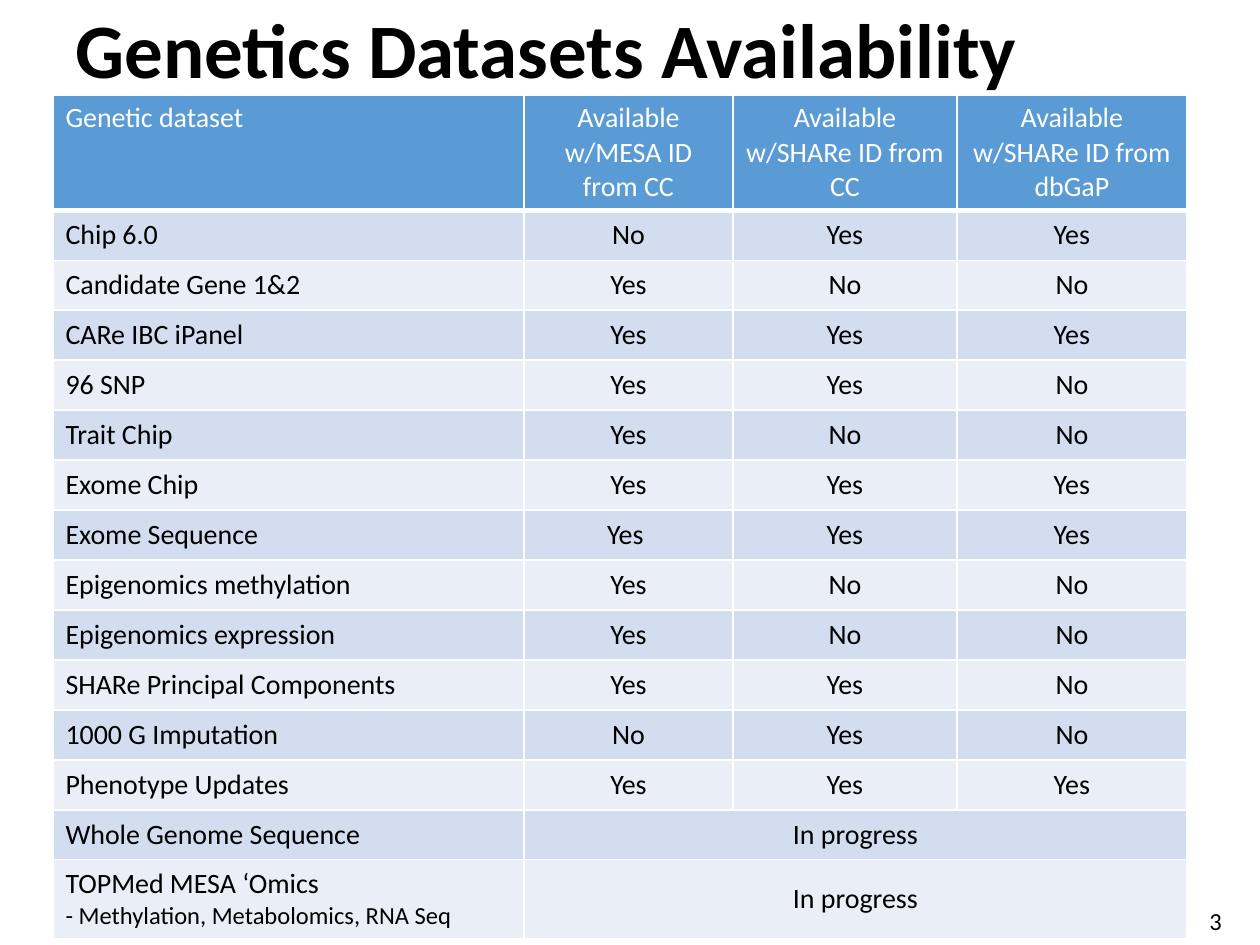
"""Build the genetics dataset availability slide."""
import dataclasses
import typing

import pptx
import pptx.dml.color
import pptx.enum.text
import pptx.oxml
import pptx.oxml.ns
import pptx.util

ALIGN = pptx.enum.text.PP_ALIGN
ANCHOR = pptx.enum.text.MSO_ANCHOR


@dataclasses.dataclass(frozen=True)
class Theme:
    face: str = "Calibri"
    ink: str = "000000"
    paper: str = "FFFFFF"
    header: str = "5B9BD5"
    bands: tuple[str, str] = ("D2DEEF", "EAEFF7")
    title_size: int = 44
    cell_size: int = 16
    small_size: int = 14
    rule: int = 1
    header_rule: int = 3


@dataclasses.dataclass(frozen=True)
class Dataset:
    name: str
    status: tuple[str, ...]
    detail: str = ""


THEME = Theme()
COLUMNS = (471, 209, 224, 230)
HEADER_HEIGHT, ROW_HEIGHT, DETAIL_HEIGHT = 115, 50, 79
HEADINGS = Dataset("Genetic dataset", (
    "Available w/MESA ID from CC",
    "Available w/SHARe ID from CC",
    "Available w/SHARe ID from dbGaP",
))
DATASETS = (
    Dataset("Chip 6.0", ("No", "Yes", "Yes")),
    Dataset("Candidate Gene 1&2", ("Yes", "No", "No")),
    Dataset("CARe IBC iPanel", ("Yes", "Yes", "Yes")),
    Dataset("96 SNP", ("Yes", "Yes", "No")),
    Dataset("Trait Chip", ("Yes", "No", "No")),
    Dataset("Exome Chip", ("Yes", "Yes", "Yes")),
    Dataset("Exome Sequence", ("Yes ", "Yes", "Yes")),
    Dataset("Epigenomics methylation", ("Yes", "No", "No")),
    Dataset("Epigenomics expression", ("Yes", "No", "No")),
    Dataset("SHARe Principal Components", ("Yes", "Yes", "No")),
    Dataset("1000 G Imputation", ("No", "Yes", "No")),
    Dataset("Phenotype Updates", ("Yes", "Yes", "Yes")),
    Dataset("Whole Genome Sequence", ("In progress",)),
    Dataset("TOPMed MESA ‘Omics", ("In progress",),
            "- Methylation, Metabolomics, RNA Seq"),
)


def px(length: int) -> pptx.util.Emu:
    return pptx.util.Emu(round(length * 914400 / 126))


def apply(target: typing.Any, values: dict[str, typing.Any]) -> None:
    for name, value in values.items():
        setattr(target, name, value)


def write(paragraph: typing.Any, text: str, size: int, color: str,
          align: ALIGN = ALIGN.LEFT, bold: bool = False) -> typing.Any:
    paragraph.alignment = align
    run = paragraph.add_run()
    run.text = text
    apply(run.font, {"name": THEME.face, "size": pptx.util.Pt(size), "bold": bold})
    run.font.color.rgb = pptx.dml.color.RGBColor.from_string(color)
    return run


def draw_title(slide: typing.Any, text: str) -> None:
    title = slide.shapes.title
    apply(title, {"left": px(63), "top": px(1), "width": px(1134), "height": px(105)})
    apply(title.text_frame, {"word_wrap": True, "vertical_anchor": ANCHOR.MIDDLE,
                             "auto_size": pptx.enum.text.MSO_AUTO_SIZE.NONE})
    heading = title.text_frame.paragraphs[0]
    heading.line_spacing = 0.9
    run = write(heading, text, THEME.title_size, THEME.ink, bold=True)
    shadow = pptx.oxml.parse_xml(
        f'<a:effectLst {pptx.oxml.ns.nsdecls("a")}>'
        '<a:outerShdw blurRad="38100" dist="38100" dir="2700000" algn="tl">'
        f'<a:srgbClr val="{THEME.ink}"><a:alpha val="43000"/></a:srgbClr>'
        '</a:outerShdw></a:effectLst>')
    run.font.fill._xPr.find(pptx.oxml.ns.qn("a:solidFill")).addnext(shadow)


def style_cell(cell: typing.Any, fill: str, rules: dict[str, int]) -> None:
    properties = cell._tc.get_or_add_tcPr()
    for side, weight in rules.items():
        properties.append(pptx.oxml.parse_xml(
            f'<a:ln{side} {pptx.oxml.ns.nsdecls("a")} w="{pptx.util.Pt(weight)}">'
            f'<a:solidFill><a:srgbClr val="{THEME.paper}"/></a:solidFill></a:ln{side}>'))
    cell.fill.solid()
    cell.fill.fore_color.rgb = pptx.dml.color.RGBColor.from_string(fill)


def draw_row(table: typing.Any, index: int, dataset: Dataset) -> None:
    is_header = index == 0
    fill = THEME.header if is_header else THEME.bands[(index - 1) % 2]
    ink = THEME.paper if is_header else THEME.ink
    rules = {"L": THEME.rule, "R": THEME.rule}
    if is_header:
        rules["T"] = THEME.rule
    rules["B"] = THEME.header_rule if is_header else THEME.rule
    cells = [table.cell(index, column) for column in range(len(COLUMNS))]
    for cell in cells:
        style_cell(cell, fill, rules)
        cell.vertical_anchor = ANCHOR.TOP if is_header else ANCHOR.MIDDLE
    if len(dataset.status) == 1:
        cells[1].merge(cells[-1])
    for column, (cell, text) in enumerate(zip(cells, (dataset.name, *dataset.status))):
        write(cell.text_frame.paragraphs[0], text, THEME.cell_size, ink,
              ALIGN.CENTER if column else ALIGN.LEFT)
    if dataset.detail:
        write(cells[0].text_frame.add_paragraph(), dataset.detail, THEME.small_size, ink)


def draw_availability(slide: typing.Any) -> None:
    rows = (HEADINGS, *DATASETS)
    heights = [HEADER_HEIGHT] + [DETAIL_HEIGHT if dataset.detail else ROW_HEIGHT
                                 for dataset in DATASETS]
    table = slide.shapes.add_table(len(rows), len(COLUMNS), px(53), px(95),
                                   px(sum(COLUMNS)), px(sum(heights))).table
    apply(table, {"first_row": False, "horz_banding": False})
    for column, width in zip(table.columns, COLUMNS):
        column.width = px(width)
    for index, (dataset, height) in enumerate(zip(rows, heights)):
        table.rows[index].height = px(height)
        draw_row(table, index, dataset)


def draw_page_number(slide: typing.Any, number: str) -> None:
    page = slide.shapes.add_textbox(px(1197), px(900), px(38), px(43)).text_frame
    apply(page, {"word_wrap": False,
                 "auto_size": pptx.enum.text.MSO_AUTO_SIZE.SHAPE_TO_FIT_TEXT})
    write(page.paragraphs[0], number, THEME.small_size, THEME.ink)


def main() -> None:
    deck = pptx.Presentation()
    apply(deck, {"slide_width": px(1260), "slide_height": px(945)})
    slide = deck.slides.add_slide(deck.slide_layouts[5])
    draw_title(slide, "Genetics Datasets Availability")
    draw_availability(slide)
    draw_page_number(slide, "3")
    deck.save("out.pptx")


if __name__ == "__main__":
    main()
